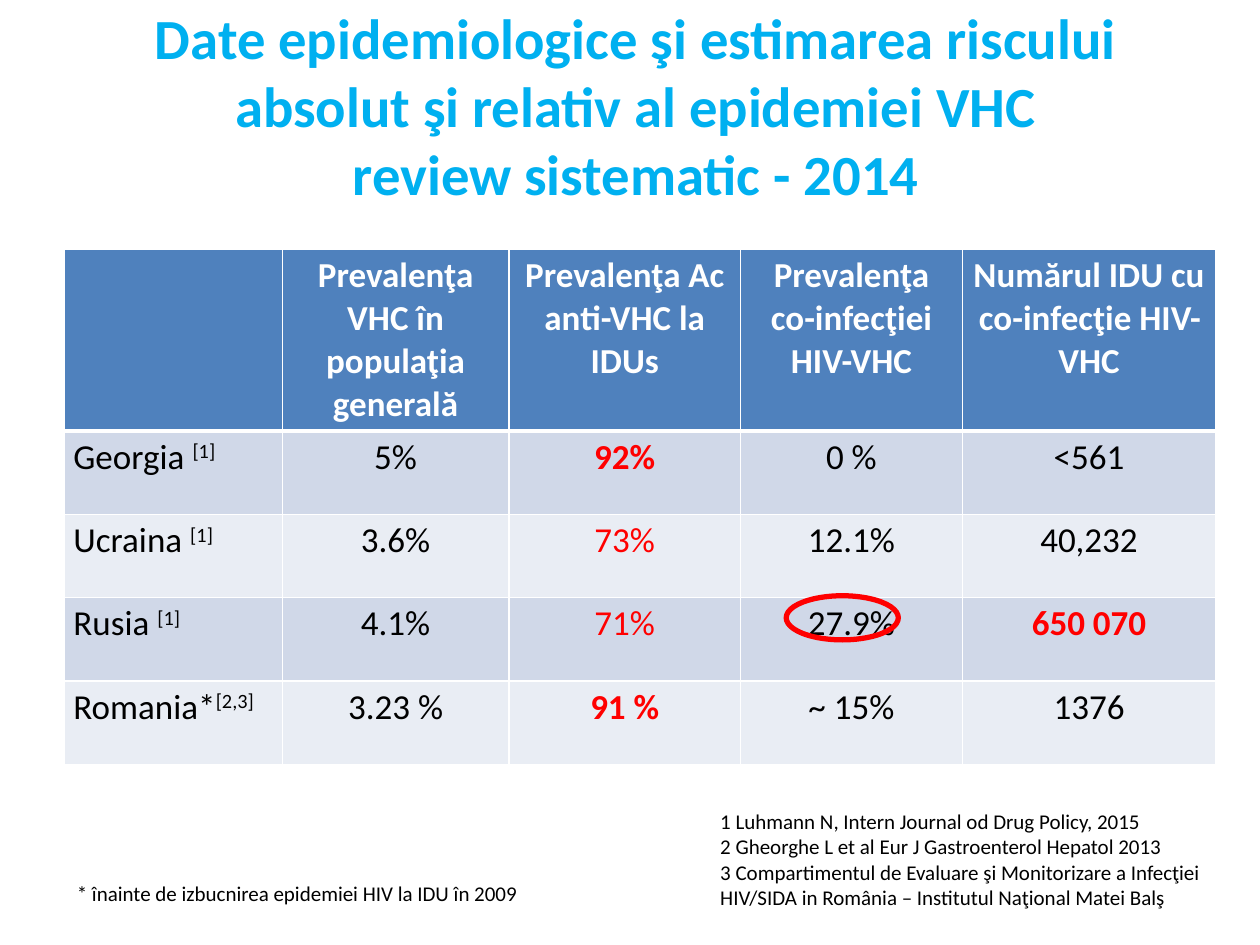
from pptx import Presentation
from pptx.dml.color import RGBColor
from pptx.enum.shapes import MSO_SHAPE
from pptx.enum.text import MSO_ANCHOR, MSO_AUTO_SIZE, PP_ALIGN
from pptx.oxml import parse_xml
from pptx.oxml.ns import nsdecls
from pptx.util import Cm, Pt

WHITE, BLACK, RED = "FFFFFF", "000000", "FF0000"
TITLE_BLUE, HEADER_BLUE = "00B0F0", "4F81BD"
BANDS = ("D0D8E8", "E9EDF4")

TITLE = ("Date epidemiologice şi estimarea riscului absolut şi relativ "
         "al epidemiei VHC\vreview sistematic - 2014")
HEADINGS = ("", "Prevalenţa VHC în populaţia generală", "Prevalenţa Ac anti-VHC la IDUs",
            "Prevalenţa co-infecţiei HIV-VHC", "Numărul IDU cu co-infecţie HIV-VHC")
COUNTRIES = (
    ("Georgia ", "[1]", "5%", "92%", "0 %", "<561"),
    ("Ucraina ", "[1]", "3.6%", "73%", "12.1%", "40,232"),
    ("Rusia ", "[1]", "4.1%", "71%", "27.9%", "650 070"),
    ("Romania*", "[2,3]", "3.23 %", "91 %", "~ 15%", "1376"),
)
STRONG_VALUES = {"92%", "91 %", "650 070"}
RED_VALUES = STRONG_VALUES | {"73%", "71%"}
SOURCES = (
    "1 Luhmann N, Intern Journal od Drug Policy, 2015",
    "2 Gheorghe L et al Eur J Gastroenterol Hepatol 2013",
    "3 Compartimentul de Evaluare şi Monitorizare a Infecţiei HIV/SIDA in România"
    " – Institutul Naţional Matei Balş",
)
FOOTNOTE = "* înainte de izbucnirea epidemiei HIV la IDU în 2009"


def rgb(value):
    return RGBColor.from_string(value)


def apply(target, values):
    for attribute, value in values.items():
        setattr(target, attribute, value)


class SlideBuilder:
    font = "Calibri"
    cell_format = {
        "margin_left": Cm(0.18), "margin_right": Cm(0.18),
        "margin_top": Cm(0.1), "margin_bottom": Cm(0.1),
    }

    def __init__(self, slide):
        self.slide = slide

    def set_text(self, paragraph, text, size, color, bold=False, align=PP_ALIGN.LEFT):
        paragraph.text = text
        paragraph.alignment = align
        for run in paragraph.runs:
            self.style(run, size, color, bold)

    def style(self, run, size, color, bold=False):
        apply(run.font, {"name": self.font, "size": Pt(size), "bold": bold})
        run.font.color.rgb = rgb(color)

    def title(self, text, left, top, width, height):
        heading = self.slide.shapes.title
        apply(heading, {"left": Cm(left), "top": Cm(top),
                        "width": Cm(width), "height": Cm(height)})
        apply(heading.text_frame, {
            "word_wrap": True, "auto_size": MSO_AUTO_SIZE.NONE,
            "vertical_anchor": MSO_ANCHOR.MIDDLE, "margin_top": Cm(1.2)})
        self.set_text(heading.text_frame.paragraphs[0], text, 32.4, TITLE_BLUE,
                      True, PP_ALIGN.CENTER)

    def notes(self, lines, left, top, width, height):
        frame = self.slide.shapes.add_textbox(
            Cm(left), Cm(top), Cm(width), Cm(height)).text_frame
        apply(frame, {"word_wrap": True, "auto_size": MSO_AUTO_SIZE.SHAPE_TO_FIT_TEXT})
        for index, line in enumerate(lines):
            paragraph = frame.add_paragraph() if index else frame.paragraphs[0]
            self.set_text(paragraph, line, 12, BLACK)

    def ring(self, left, top, width, height):
        ring = self.slide.shapes.add_shape(
            MSO_SHAPE.OVAL, Cm(left), Cm(top), Cm(width), Cm(height))
        ring.shadow.inherit = False
        ring.fill.background()
        ring.line.color.rgb = rgb(RED)
        ring.line.width = Pt(3)

    def cell(self, cell, fill, bottom=1):
        """Set margins, fill and white borders; bottom is a width in points."""
        apply(cell, self.cell_format)
        cell.fill.solid()
        cell.fill.fore_color.rgb = rgb(fill)
        properties = cell._tc.get_or_add_tcPr()
        for index, (side, width) in enumerate(zip("LRTB", (1, 1, 1, bottom))):
            properties.insert(index, parse_xml(
                f'<a:ln{side} {nsdecls("a")} w="{Pt(width)}"><a:solidFill>'
                f'<a:srgbClr val="{WHITE}"/></a:solidFill></a:ln{side}>'))

    def table(self, left, top, column_widths, header_height, row_height):
        heights = [header_height] + [row_height] * len(COUNTRIES)
        table = self.slide.shapes.add_table(
            len(heights), len(column_widths), Cm(left), Cm(top),
            Cm(sum(column_widths)), Cm(sum(heights))).table
        table.horz_banding = False
        for column, width in zip(table.columns, column_widths):
            column.width = Cm(width)
        for row, height in zip(table.rows, heights):
            row.height = Cm(height)

        for column, heading in enumerate(HEADINGS):
            cell = table.cell(0, column)
            self.cell(cell, HEADER_BLUE, bottom=3)
            self.set_text(cell.text_frame.paragraphs[0], heading, 20, WHITE,
                          True, PP_ALIGN.CENTER)
        for row, (country, reference, *values) in enumerate(COUNTRIES, 1):
            band = BANDS[(row - 1) % 2]
            for column, text in enumerate((country, *values)):
                cell = table.cell(row, column)
                self.cell(cell, band)
                self.set_text(cell.text_frame.paragraphs[0], text, 20,
                              RED if text in RED_VALUES else BLACK, text in STRONG_VALUES,
                              PP_ALIGN.CENTER if column else PP_ALIGN.LEFT)
            self.superscript(table.cell(row, 0).text_frame.paragraphs[0], reference)

    def superscript(self, paragraph, text):
        run = paragraph.add_run()
        run.text = text
        self.style(run, 20, BLACK)
        run._r.get_or_add_rPr().set("baseline", "30000")


def main():
    presentation = Presentation()
    apply(presentation, {"slide_width": Cm(25.4), "slide_height": Cm(19.05)})
    builder = SlideBuilder(presentation.slides.add_slide(presentation.slide_layouts[5]))
    builder.title(TITLE, 1.22, 0.38, 23.19, 2.39)
    builder.table(1.3, 5.03, (4.39, 4.57, 4.67, 4.47, 5.11), 3.62, 1.68)
    builder.notes(SOURCES, 14.27, 16.18, 11.07, 2.9)
    builder.notes([FOOTNOTE], 1.3, 17.63, 9.53, 1.35)
    builder.ring(15.85, 12.01, 2.26, 0.89)
    presentation.save("out.pptx")


if __name__ == "__main__":
    main()
